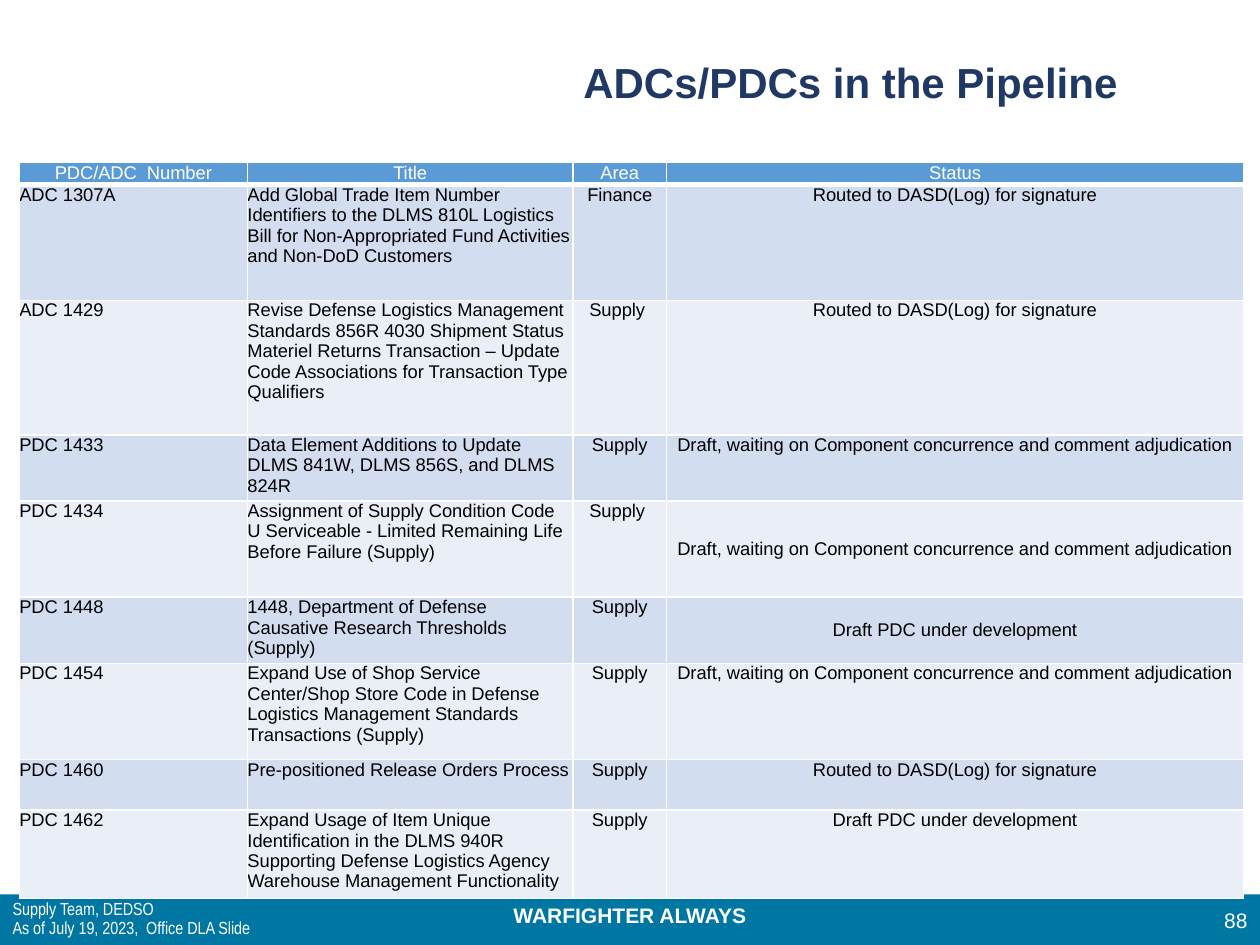
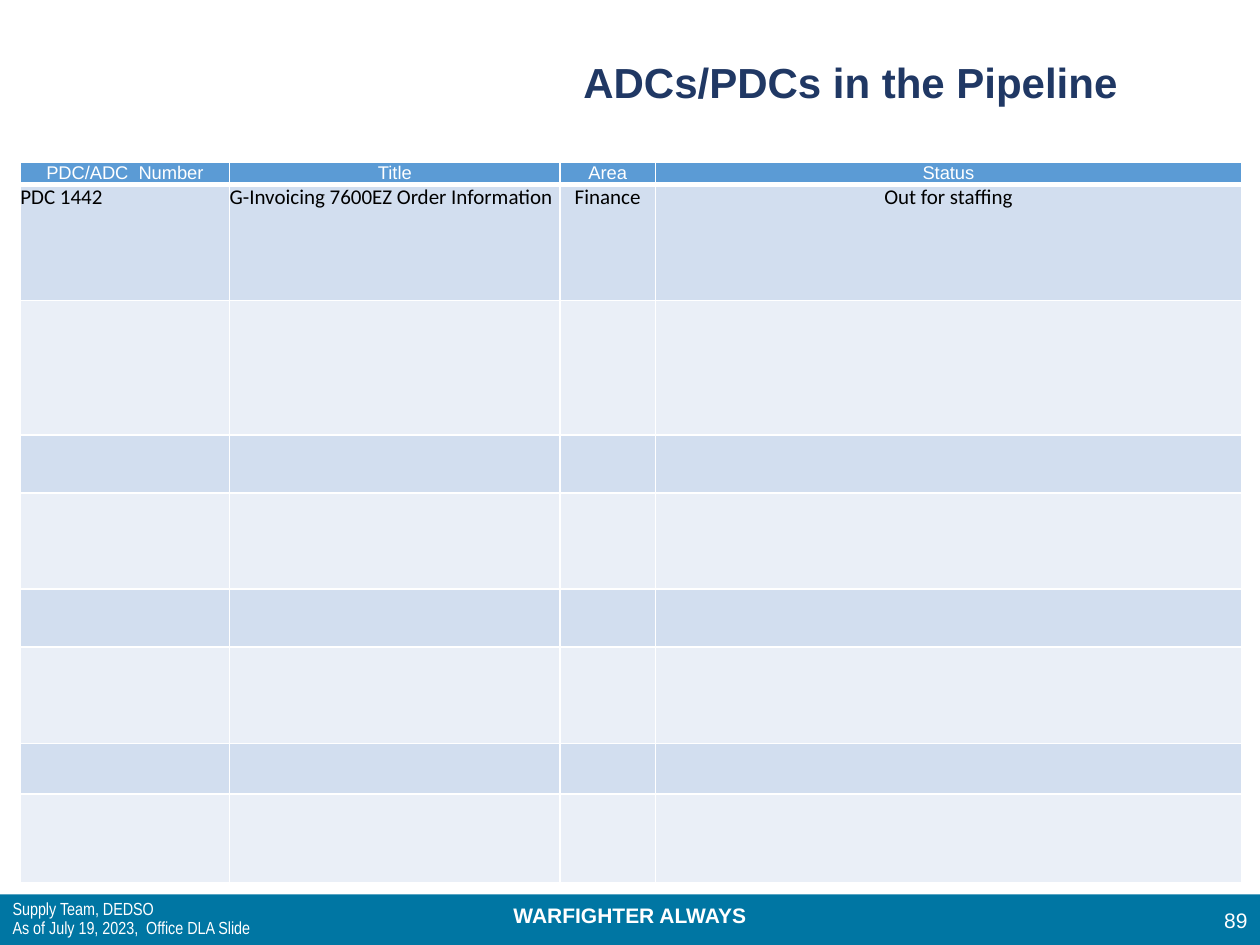
import pptx
import pptx.util
import pptx.dml.color
import pptx.enum.shapes
import pptx.enum.text
import pptx.oxml.ns
import lxml.etree

Cm = pptx.util.Cm
qn = pptx.oxml.ns.qn
ALIGN = pptx.enum.text.PP_ALIGN
ANCHOR = pptx.enum.text.MSO_ANCHOR

HUES = {
    "band": "0076A3", "title": "203864", "white": "FFFFFF", "black": "000000",
    "head": "5B9BD5", "odd": "D2DEEF", "even": "EAEFF7",
}

# Table content
HEADS = ["PDC/ADC  Number", "Title", "Area", "Status"]
SIGN = "Routed to DASD(Log) for signature"
WAIT = "Draft, waiting on Component concurrence and comment adjudication"
DRAFT = "Draft PDC under development"
SUPPLY = [
    ["ADC 1307A", "Add Global Trade Item Number Identifiers to the DLMS 810L Logistics "
     "Bill for Non-Appropriated Fund Activities and Non-DoD Customers", "Finance", SIGN],
    ["ADC 1429", "Revise Defense Logistics Management Standards 856R 4030 Shipment Status "
     "Materiel Returns Transaction – Update Code Associations for Transaction Type "
     "Qualifiers", "Supply ", SIGN],
    ["PDC 1433", "Data Element Additions to Update DLMS 841W, DLMS 856S, and DLMS 824R",
     "Supply", WAIT],
    ["PDC 1434", "Assignment of Supply Condition Code U Serviceable - Limited Remaining "
     "Life Before Failure (Supply)", "Supply ", WAIT],
    ["PDC 1448 ", "1448, Department of Defense Causative Research Thresholds (Supply)",
     "Supply", DRAFT],
    ["PDC 1454", "Expand Use of Shop Service Center/Shop Store Code in Defense Logistics "
     "Management Standards Transactions (Supply)", "Supply", WAIT],
    ["PDC 1460", "Pre-positioned Release Orders Process", "Supply", SIGN],
    ["PDC 1462", "Expand Usage of Item Unique Identification in the DLMS 940R Supporting "
     "Defense Logistics Agency Warehouse Management Functionality", "Supply", DRAFT],
]
STAFF = [["PDC 1442", "G-Invoicing 7600EZ Order Information", "Finance", "Out for staffing"]]
MIDDLE = ["PDC 1434", "PDC 1448 "]  # rows with a centred status

# Page number, table left, column widths, body size, body font, rows
PAGES = [
    ("88", 0.39, [4.6, 6.56, 1.89, 11.63], 10.5, "Arial", SUPPLY),
    ("89", 0.41, [4.22, 6.66, 1.92, 11.82], 12, "Calibri", STAFF),
]
TALL = [0.41, 2.33, 2.71, 1.17, 1.94, 1.17, 1.94, 1.02, 1.78]


def style(frame, size, font, hue, bold=False, align=ALIGN.LEFT):
    for para in frame.paragraphs:
        para.alignment = align
        for run in para.runs:
            run.font.size = pptx.util.Pt(size)
            run.font.name = font
            run.font.bold = bold
            run.font.color.rgb = pptx.dml.color.RGBColor.from_string(HUES[hue])


def edge(cell, side, width):
    line = lxml.etree.SubElement(cell._tc.get_or_add_tcPr(), qn("a:ln" + side),
                                 w=str(pptx.util.Pt(width)))
    fill = lxml.etree.SubElement(line, qn("a:solidFill"))
    lxml.etree.SubElement(fill, qn("a:srgbClr"), val=HUES["white"])


deck = pptx.Presentation()
deck.slide_width, deck.slide_height = Cm(25.4), Cm(19.05)
plan = deck.slide_layouts[1]
slides = [deck.slides.add_slide(plan) for page in PAGES]

# Bottom band and motto, drawn once and moved to the layout
band = slides[0].shapes.add_shape(pptx.enum.shapes.MSO_SHAPE.RECTANGLE,
                                  0, Cm(18.03), Cm(25.4), Cm(1.02))
band.shadow.inherit = False
band.fill.solid()
band.fill.fore_color.rgb = pptx.dml.color.RGBColor.from_string(HUES["band"])
band.line.fill.background()
motto = slides[0].shapes.add_textbox(0, Cm(18.06), Cm(25.4), Cm(0.76))
motto.text_frame.word_wrap = True
motto.text_frame.text = "WARFIGHTER ALWAYS"
style(motto.text_frame, 12, "Arial", "white", True, ALIGN.CENTER)
for part in (band, motto):
    plan.shapes.element.append(part.element)

for slide, (number, left, widths, size, font, rows) in zip(slides, PAGES):
    # Title
    title = slide.shapes.title
    title.left, title.top, title.width, title.height = Cm(10.16), Cm(1.02), Cm(13.97), Cm(2.29)
    title.text_frame.text = "ADCs/PDCs in the Pipeline"
    title.text_frame.vertical_anchor = ANCHOR.TOP
    style(title.text_frame, 24, "Arial", "title", True, ALIGN.CENTER)

    # Page number
    page = slide.shapes.add_textbox(Cm(24.13), Cm(18.03), Cm(1.27), Cm(1.02))
    page.text_frame.word_wrap = True
    page.text_frame.text = number
    page.text_frame.vertical_anchor = ANCHOR.MIDDLE
    style(page.text_frame, 12, "Arial", "white", align=ALIGN.RIGHT)

    # Team and date
    team = slide.placeholders[1]
    team.left, team.top, team.width, team.height = 0, Cm(18.03), Cm(7.62), Cm(1.02)
    team.text_frame.text = "Supply Team, DEDSO\vAs of July 19, 2023,  Office DLA Slide"
    team.text_frame.auto_size = pptx.enum.text.MSO_AUTO_SIZE.NONE
    team.text_frame.vertical_anchor = ANCHOR.MIDDLE
    para = team.text_frame.paragraphs[0]
    props = para._p.get_or_add_pPr()
    props.set("marL", "0")
    props.set("indent", "0")
    lxml.etree.SubElement(props, qn("a:buNone"))
    para.line_spacing = 0.9
    para.space_before = 0
    style(team.text_frame, 10, "Arial Narrow", "white")
    for gap in team.element.iter(qn("a:br")):
        lxml.etree.SubElement(gap, qn("a:rPr"), sz="1000")

    # Table
    grid = slide.shapes.add_table(len(TALL), len(HEADS), Cm(left), Cm(3.28),
                                  Cm(sum(widths)), Cm(sum(TALL))).table
    grid.first_row = grid.horz_banding = False
    for col, width in zip(grid.columns, widths):
        col.width = Cm(width)
    for r, height in enumerate(TALL):
        grid.rows[r].height = Cm(height)
        words = ([HEADS] + rows)[r] if r <= len(rows) else [""] * len(HEADS)
        for c, word in enumerate(words):
            cell = grid.cell(r, c)
            cell.margin_left = cell.margin_right = cell.margin_top = cell.margin_bottom = 0
            for side in "LRTB":
                thick = (r, side) in [(0, "B"), (1, "T")]
                edge(cell, side, 3 if thick else 1)
            cell.fill.solid()
            hue = "head" if r == 0 else "odd" if r % 2 else "even"
            cell.fill.fore_color.rgb = pptx.dml.color.RGBColor.from_string(HUES[hue])
            if not word:
                continue
            cell.text_frame.text = word
            if r == 0:
                style(cell.text_frame, 10.5, "Arial", "white", align=ALIGN.CENTER)
            else:
                style(cell.text_frame, size, font, "black",
                      align=ALIGN.LEFT if c < 2 else ALIGN.CENTER)
            if c == 3 and words[0] in MIDDLE:
                cell.vertical_anchor = ANCHOR.MIDDLE

deck.save("out.pptx")
